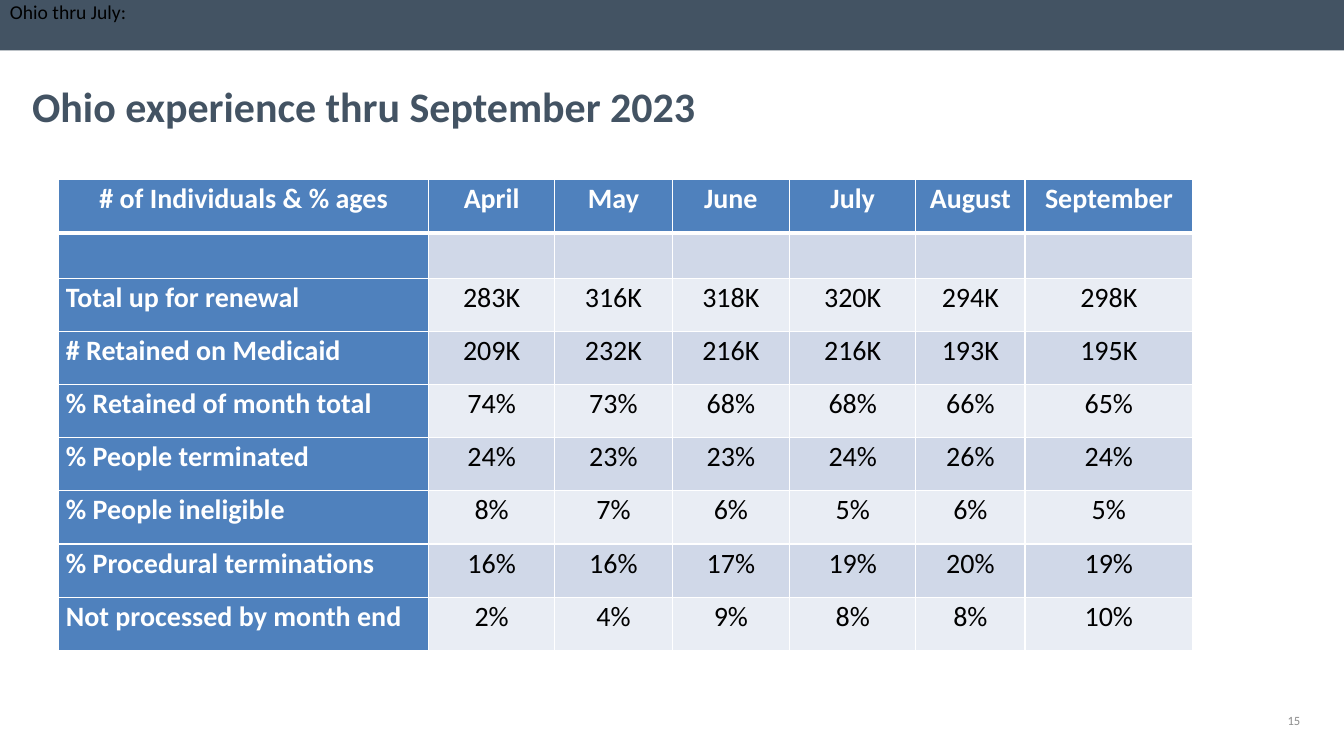
from lxml import etree
from pptx import Presentation
from pptx.dml.color import RGBColor
from pptx.enum.shapes import MSO_SHAPE
from pptx.enum.text import MSO_ANCHOR, PP_ALIGN
from pptx.oxml.ns import qn
from pptx.util import Cm, Pt

RECT = MSO_SHAPE.RECTANGLE
TOP, MIDDLE = MSO_ANCHOR.TOP, MSO_ANCHOR.MIDDLE
LEFT, CENTER, RIGHT = PP_ALIGN.LEFT, PP_ALIGN.CENTER, PP_ALIGN.RIGHT

FONT = "Calibri"
SLATE, BLUE, WHITE, BLACK, GREY = "435363", "4F81BD", "FFFFFF", "000000", "8C8C8C"
BANDS = ("E9EDF4", "D0D8E8")

COL_WIDTHS = (9.32, 3.18, 2.96, 2.96, 3.18, 2.75, 4.23)
ROW_HEIGHT, GAP_ROW_HEIGHT = 1.34, 1.14
ROWS = (
    ("# of Individuals & % ages", "April", "May", "June", "July", "August", "September"),
    ("",) * 7,
    ("Total up for renewal", "283K", "316K", "318K", "320K", "294K", "298K"),
    ("# Retained on Medicaid", "209K", "232K", "216K", "216K", "193K", "195K"),
    ("% Retained of month total", "74%", "73%", "68%", "68%", "66%", "65%"),
    ("% People terminated", "24%", "23%", "23%", "24%", "26%", "24%"),
    ("% People ineligible", "8%", "7%", "6%", "5%", "6%", "5%"),
    ("% Procedural terminations", "16%", "16%", "17%", "19%", "20%", "19%"),
    ("Not processed by month end", "2%", "4%", "9%", "8%", "8%", "10%"),
)


def rgb(color):
    return RGBColor.from_string(color)


def style(p, size, color, bold=False, align=LEFT):
    p.alignment = align
    p.font.name = FONT
    p.font.size = Pt(size)
    p.font.bold = bold
    p.font.color.rgb = rgb(color)


def add_bar(s, left, top, width, height, color):
    bar = s.shapes.add_shape(RECT, Cm(left), Cm(top), Cm(width), Cm(height))
    bar.shadow.inherit = False
    bar.fill.solid()
    bar.fill.fore_color.rgb = rgb(color)
    bar.line.fill.background()


def add_text(s, text, left, top, width, height, size, color,
             bold=False, align=LEFT, anchor=TOP, margin_top=0.13):
    sp = s.shapes.add_textbox(Cm(left), Cm(top), Cm(width), Cm(height))
    tf = sp.text_frame
    tf.word_wrap = True
    tf.vertical_anchor = anchor
    tf.margin_top = Cm(margin_top)
    p = tf.paragraphs[0]
    p.text = text
    style(p, size, color, bold, align)


def set_borders(cell, top, bottom):
    tc_pr = cell._tc.get_or_add_tcPr()
    widths = {"a:lnL": 1, "a:lnR": 1, "a:lnT": top, "a:lnB": bottom}
    for tag, width in widths.items():
        ln = etree.SubElement(tc_pr, qn(tag), w=str(Pt(width)))
        fill = etree.SubElement(ln, qn("a:solidFill"))
        etree.SubElement(fill, qn("a:srgbClr"), val=WHITE)


def fill_cell(cell, text, row, col):
    is_head = row == 0 or col == 0
    # Borders come before the fill; the line under the header is thicker
    set_borders(cell, 3 if row == 1 else 1, 3 if row == 0 else 1)
    cell.fill.solid()
    cell.fill.fore_color.rgb = rgb(BLUE if is_head else BANDS[row % 2])
    cell.margin_left = cell.margin_right = Cm(0.18)
    cell.margin_top = cell.margin_bottom = 0
    p = cell.text_frame.paragraphs[0]
    p.text = text
    p.line_spacing = 1.07
    style(p, 20, WHITE if is_head else BLACK, is_head,
          LEFT if col == 0 and row > 0 else CENTER)


def add_renewal_table(s, left, top):
    heights = [ROW_HEIGHT if any(row) else GAP_ROW_HEIGHT for row in ROWS]
    table = s.shapes.add_table(len(ROWS), len(COL_WIDTHS), Cm(left), Cm(top),
                               Cm(sum(COL_WIDTHS)), Cm(sum(heights))).table
    for column, width in zip(table.columns, COL_WIDTHS):
        column.width = Cm(width)
    for r, (values, height) in enumerate(zip(ROWS, heights)):
        table.rows[r].height = Cm(height)
        for c, text in enumerate(values):
            fill_cell(table.cell(r, c), text, r, c)


def main():
    prs = Presentation()
    prs.slide_width, prs.slide_height = Cm(33.87), Cm(19.05)
    s = prs.slides.add_slide(prs.slide_layouts[6])

    # Top bar and title
    add_bar(s, 0, 0, 33.87, 1.27, SLATE)
    add_text(s, "Ohio experience thru September 2023", 0.56, 1.9, 32.74, 1.9,
             30, SLATE, bold=True)

    # Monthly figures
    add_renewal_table(s, 1.48, 4.53)

    # Slide number and label on the bar
    add_text(s, "15", 25.12, 17.65, 7.9, 1.02, 9, GREY, align=RIGHT, anchor=MIDDLE)
    add_text(s, "Ohio thru July:", 0, 0, 33.87, 1.27, 14, BLACK, margin_top=0)

    prs.save("out.pptx")


if __name__ == "__main__":
    main()
